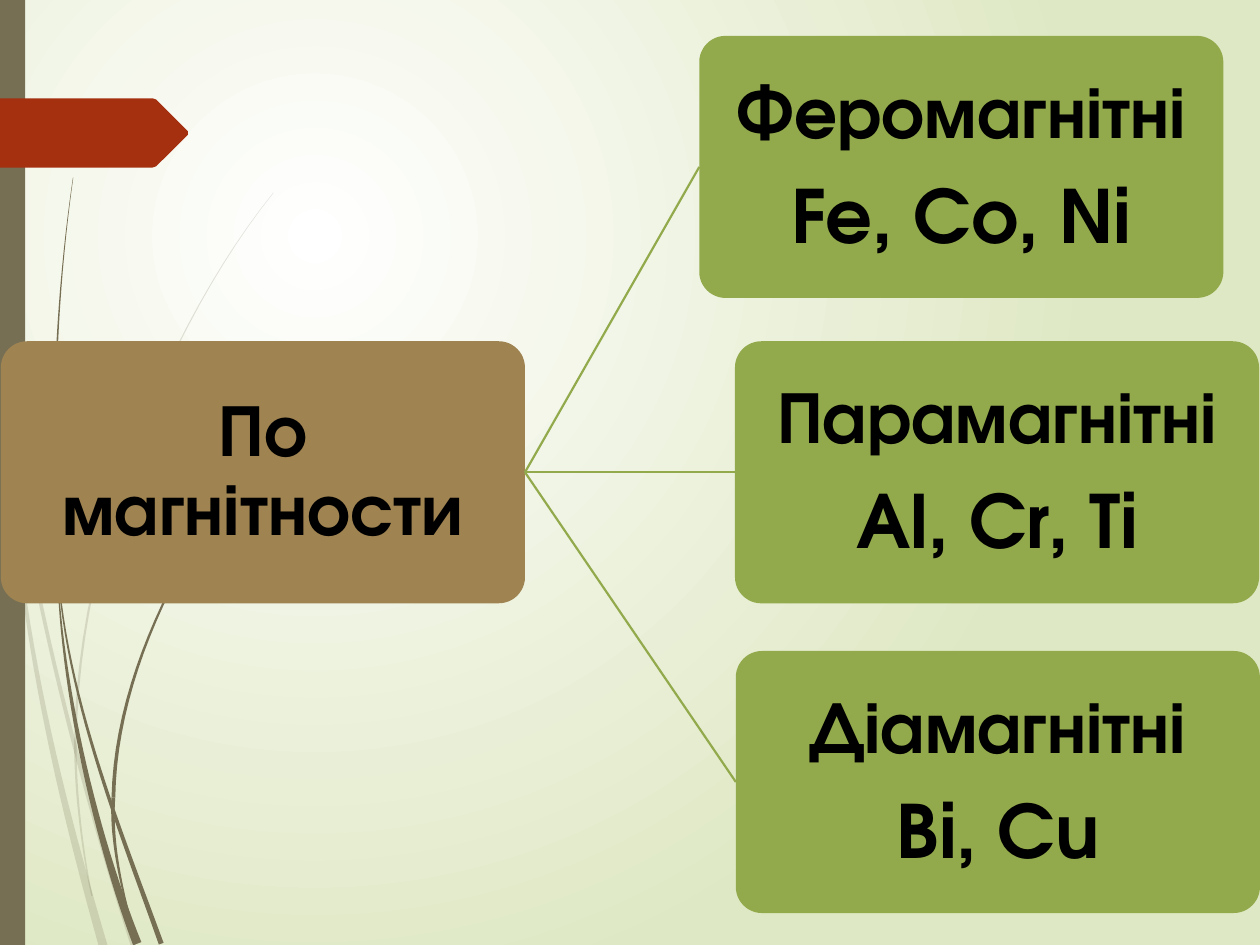
import math

import pptx
import pptx.dml.color
import pptx.enum.shapes
import pptx.enum.text
import pptx.oxml.ns
import pptx.util
from lxml import etree

Pt = pptx.util.Pt
qn = pptx.oxml.ns.qn

COLORS = {
    "white": "FFFFFF", "pale": "DFE8C4", "stem": "766F54", "tag": "A53010",
    "root": "9F8351", "leaf": "92AA4C", "text": "000000",
}
FONT = "TeX Gyre Adventor"
FONT_SIZE = 42
PARAGRAPH_GAP = 14.7

SLIDE_W, SLIDE_H = 720, 540
BOX_W, BOX_H = 299.5, 149.75
ROOT = (0.5, 195, ["По магнітности"])
LEAVES = [
    (399.6, 20.5, ["Феромагнітні", "Fe, Co, Ni"]),
    (420, 195, ["Парамагнітні", "Al, Cr, Ti"]),
    (420.5, 372, ["Діамагнітні", "Bi, Cu"]),
]

# Grass blades on a 0.72 pt grid: Bezier centre line, start width, end width.
GRID = 0.72
FAINT_BLADES = [
    ([(0, 290), (20, 450), (60, 610), (106, 751)], 2, 4),
    ([(8, 350), (14, 500), (50, 640), (82, 751)], 1, 7),
    ([(217, 153), (135, 255), (62, 430), (60, 586)], 0.3, 2),
    ([(60, 586), (59, 625), (66, 680), (73, 711)], 2, 1),
]
SOLID_BLADES = [
    ([(2.5, 0), (5, 150), (20, 340), (47, 477)], 1, 2),
    ([(47, 465), (57, 565), (96, 660), (128, 749)], 1, 4),
    ([(47, 477), (54, 570), (80, 675), (109, 749)], 1, 7),
    ([(58, 141), (41, 260), (41, 370), (48, 472)], 0.3, 3),
    ([(216, 344), (150, 425), (92, 530), (90, 633)], 0.3, 3),
    ([(90, 633), (88, 665), (95, 700), (105, 735)], 3, 1),
]
TAG = [(0, 78), (121, 78), (124, 79), (149, 104), (149, 107), (124, 132), (121, 133), (0, 133)]


def rgb(name):
    return pptx.dml.color.RGBColor.from_string(COLORS[name])


def paint(sp, color):
    sp.shadow.inherit = False
    sp.fill.solid()
    sp.fill.fore_color.rgb = rgb(color)
    sp.line.fill.background()


def blade_outline(nodes, start_width, end_width, steps=24):
    """Widen a Bezier centre line into a closed, tapered outline."""
    left, right = [], []
    for k in range(steps + 1):
        t = k / steps
        u = 1 - t
        place = (u ** 3, 3 * t * u * u, 3 * t * t * u, t ** 3)
        slope = (-u * u, u * u - 2 * t * u, 2 * t * u - t * t, t * t)
        x, y = (sum(w * n[axis] for w, n in zip(place, nodes)) for axis in (0, 1))
        dx, dy = (sum(w * n[axis] for w, n in zip(slope, nodes)) for axis in (0, 1))
        half = (start_width * u + end_width * t) / 2 / math.hypot(dx, dy)
        left.append((x - dy * half, y + dx * half))
        right.append((x + dy * half, y - dx * half))
    return left + right[::-1]


def add_outline(s, points, color, alpha=None):
    pts = [(Pt(x * GRID), Pt(y * GRID)) for x, y in points]
    builder = s.shapes.build_freeform(*pts[0])
    builder.add_line_segments(pts[1:], close=True)
    sp = builder.convert_to_shape()
    paint(sp, color)
    if alpha:
        clr = sp._element.spPr.find(qn("a:solidFill")).find(qn("a:srgbClr"))
        etree.SubElement(clr, qn("a:alpha"), val=str(alpha * 1000))


def add_box(s, left, top, lines, color):
    sp = s.shapes.add_shape(pptx.enum.shapes.MSO_SHAPE.ROUNDED_RECTANGLE,
                            Pt(left), Pt(top), Pt(BOX_W), Pt(BOX_H))
    sp.adjustments[0] = 0.1
    paint(sp, color)
    tf = sp.text_frame
    tf.word_wrap = True
    tf.vertical_anchor = pptx.enum.text.MSO_ANCHOR.MIDDLE
    tf.margin_left = tf.margin_right = tf.margin_top = tf.margin_bottom = Pt(2.1)
    for i, line in enumerate(lines):
        p = tf.add_paragraph() if i else tf.paragraphs[0]
        p.alignment = pptx.enum.text.PP_ALIGN.CENTER
        p.line_spacing = 0.9
        p.space_after = Pt(PARAGRAPH_GAP)
        r = p.add_run()
        r.text = line
        r.font.name, r.font.size, r.font.bold = FONT, Pt(FONT_SIZE), True
        r.font.color.rgb = rgb("text")
    return sp


def join(s, root, leaf):
    line = s.shapes.add_connector(pptx.enum.shapes.MSO_CONNECTOR.STRAIGHT, 0, 0, 0, 0)
    line.begin_connect(root, 3)
    line.end_connect(leaf, 1)
    line.line.color.rgb = rgb("leaf")
    line.line.width = Pt(1.25)
    etree.SubElement(line._element.spPr, qn("a:effectLst"))


def set_background(s):
    """Radial gradient, centred a quarter of the way in from the top left."""
    fill = s.background.fill
    fill.gradient()
    for stop, color in zip(fill.gradient_stops, ("white", "pale")):
        stop.color.rgb = rgb(color)
    lin = s._element.find(".//" + qn("a:lin"))
    circle = etree.Element(qn("a:path"), {"path": "circle"})
    etree.SubElement(circle, qn("a:fillToRect"), l="50000", t="50000", r="100000", b="100000")
    lin.getparent().replace(lin, circle)


def main():
    prs = pptx.Presentation()
    prs.slide_width, prs.slide_height = Pt(SLIDE_W), Pt(SLIDE_H)
    s = prs.slides.add_slide(prs.slide_layouts[6])
    set_background(s)
    for blades, alpha in ((FAINT_BLADES, 20), (SOLID_BLADES, None)):
        for blade in blades:
            add_outline(s, blade_outline(*blade), "stem", alpha)
    bar = s.shapes.add_shape(pptx.enum.shapes.MSO_SHAPE.RECTANGLE, 0, 0, Pt(14.4), Pt(SLIDE_H))
    paint(bar, "stem")
    add_outline(s, TAG, "tag")
    root = add_box(s, *ROOT, "root")
    for leaf in LEAVES:
        join(s, root, add_box(s, *leaf, "leaf"))
    prs.save("out.pptx")


if __name__ == "__main__":
    main()
